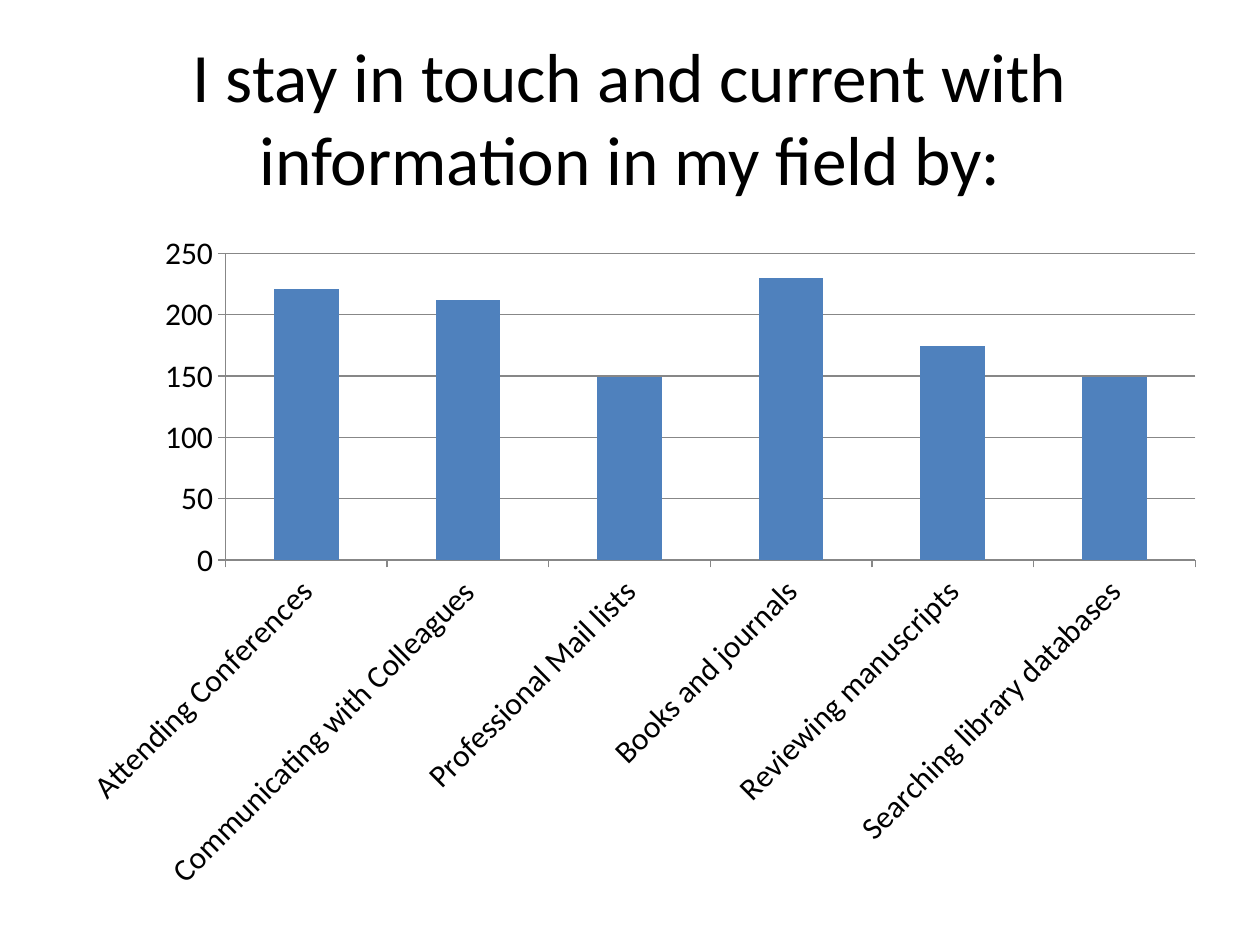
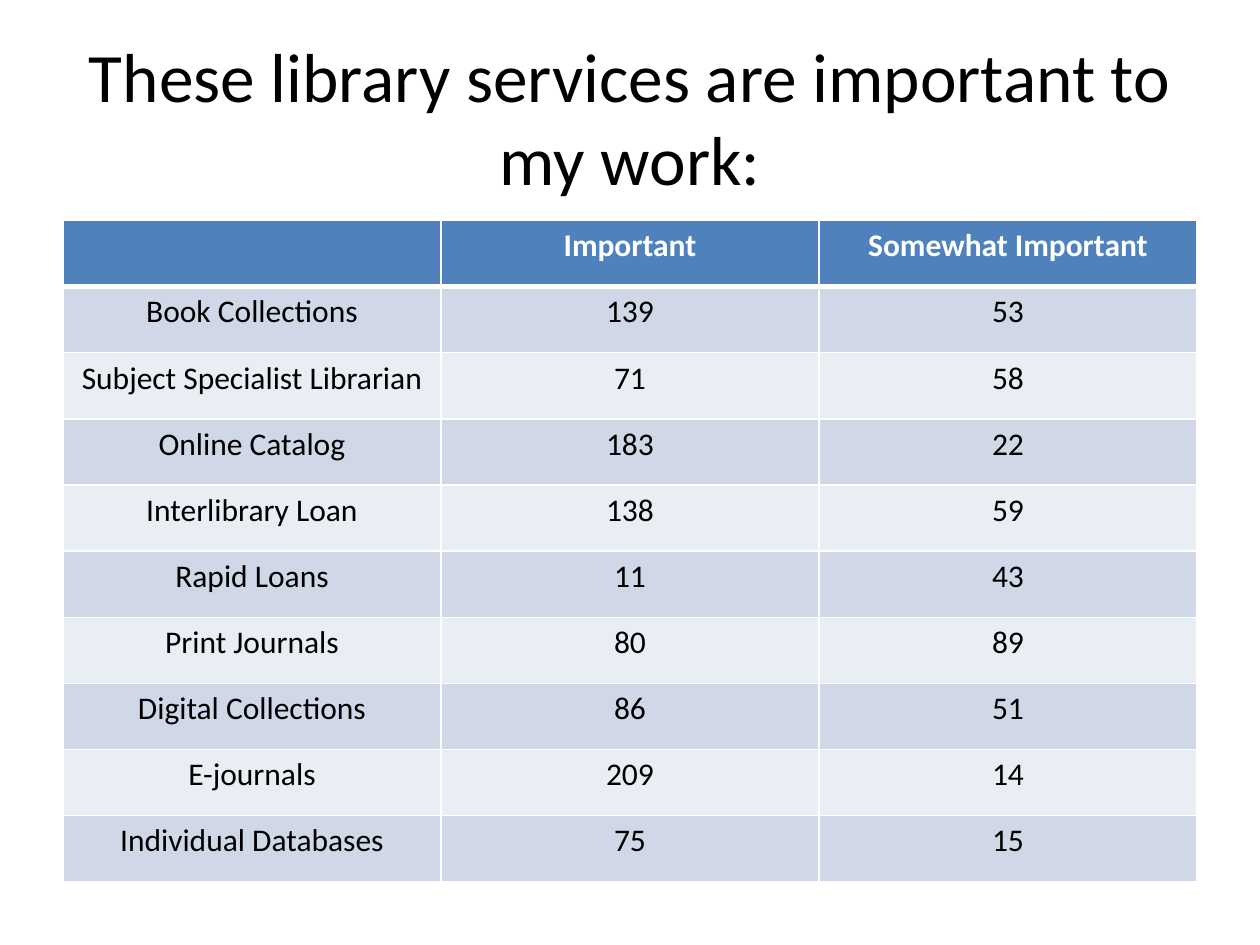
import pptx
import pptx.chart.data
import pptx.dml.color
import pptx.enum.chart
import pptx.enum.text
import pptx.oxml
import pptx.oxml.ns
import pptx.util
from pptx.util import Inches, Pt

# Content
SOURCES_TITLE = "I stay in touch and current with information in my field by:"
SOURCES = {
    "Attending Conferences": 221,
    "Communicating with Colleagues": 212,
    "Professional Mail lists": 149,
    "Books and journals": 230,
    "Reviewing manuscripts": 174,
    "Searching library databases": 149,
}
SERVICES_TITLE = "These library services are important to my work:"
SERVICES = [
    ("", "Important", "Somewhat Important"),
    ("Book Collections", 139, 53),
    ("Subject Specialist Librarian", 71, 58),
    ("Online Catalog", 183, 22),
    ("Interlibrary Loan", 138, 59),
    ("Rapid Loans", 11, 43),
    ("Print Journals", 80, 89),
    ("Digital Collections", 86, 51),
    ("E-journals", 209, 14),
    ("Individual Databases", 75, 15),
]

# Shared style
FONT = "Calibri"
COLORS = {"text": "000000", "accent": "4F81BD", "white": "FFFFFF",
          "odd_row": "D0D8E8", "even_row": "E9EDF4", "axis": "878787"}
LEFT, BODY_TOP, WIDTH = 0.5, 1.75, 9


def rgb(name):
    return pptx.dml.color.RGBColor.from_string(COLORS[name])


def style_font(font, size, color="text", bold=False):
    font.name, font.size, font.bold = FONT, Pt(size), bold
    font.color.rgb = rgb(color)


def add_titled_slide(deck, title):
    slide = deck.slides.add_slide(deck.slide_layouts[6])
    frame = slide.shapes.add_textbox(
        Inches(LEFT), Inches(0.3), Inches(WIDTH), Inches(1.25)).text_frame
    frame.word_wrap = True
    frame.vertical_anchor = pptx.enum.text.MSO_ANCHOR.MIDDLE
    heading = frame.paragraphs[0]
    heading.text = title
    heading.alignment = pptx.enum.text.PP_ALIGN.CENTER
    style_font(heading.font, 39.6)
    return slide


def add_sources_chart(slide):
    data = pptx.chart.data.CategoryChartData()
    data.categories = list(SOURCES)
    data.add_series("Series 1", list(SOURCES.values()))
    chart = slide.shapes.add_chart(
        pptx.enum.chart.XL_CHART_TYPE.COLUMN_STACKED, Inches(LEFT),
        Inches(BODY_TOP), Inches(9.17), Inches(5.42), data).chart
    chart.has_legend = chart.has_title = False
    style_font(chart.font, 18)

    # Bars
    plot = chart.plots[0]
    plot.gap_width, plot.overlap, plot.vary_by_categories = 150, 100, False
    bars = plot.series[0].format.fill
    bars.solid()
    bars.fore_color.rgb = rgb("accent")

    # Axes and gridlines
    chart.value_axis.has_major_gridlines = True
    lines = [chart.value_axis.major_gridlines.format.line]
    for axis in (chart.category_axis, chart.value_axis):
        axis.major_tick_mark = pptx.enum.chart.XL_TICK_MARK.OUTSIDE
        axis.minor_tick_mark = pptx.enum.chart.XL_TICK_MARK.NONE
        lines.append(axis.format.line)
    for line in lines:
        line.color.rgb = rgb("axis")
        line.width = Pt(0.75)


def set_borders(cell, top, bottom):
    properties = cell._tc.get_or_add_tcPr()
    sides = (("L", 1), ("R", 1), ("T", top), ("B", bottom))
    for position, (side, points) in enumerate(sides):
        properties.insert(position, pptx.oxml.parse_xml(
            f'<a:ln{side} {pptx.oxml.ns.nsdecls("a")} w="{Pt(points)}">'
            f'<a:solidFill><a:srgbClr val="{COLORS["white"]}"/></a:solidFill>'
            f'</a:ln{side}>'))


def add_services_table(slide):
    row_count, column_count = len(SERVICES), len(SERVICES[0])
    table = slide.shapes.add_table(
        row_count, column_count, Inches(LEFT), Inches(BODY_TOP),
        Inches(WIDTH), Inches(5.25)).table
    for r, service in enumerate(SERVICES):
        header = r == 0
        fill = "accent" if header else "odd_row" if r % 2 else "even_row"
        for c, value in enumerate(service):
            cell = table.cell(r, c)
            cell.fill.solid()
            cell.fill.fore_color.rgb = rgb(fill)
            set_borders(cell, top=3 if r == 1 else 1, bottom=3 if header else 1)
            entry = cell.text_frame.paragraphs[0]
            entry.text = str(value)
            entry.alignment = pptx.enum.text.PP_ALIGN.CENTER
            style_font(entry.font, 18, "white" if header else "text", header)


def main():
    deck = pptx.Presentation()
    deck.slide_width, deck.slide_height = Inches(10), Inches(7.5)
    add_sources_chart(add_titled_slide(deck, SOURCES_TITLE))
    add_services_table(add_titled_slide(deck, SERVICES_TITLE))
    deck.save("out.pptx")


if __name__ == "__main__":
    main()
